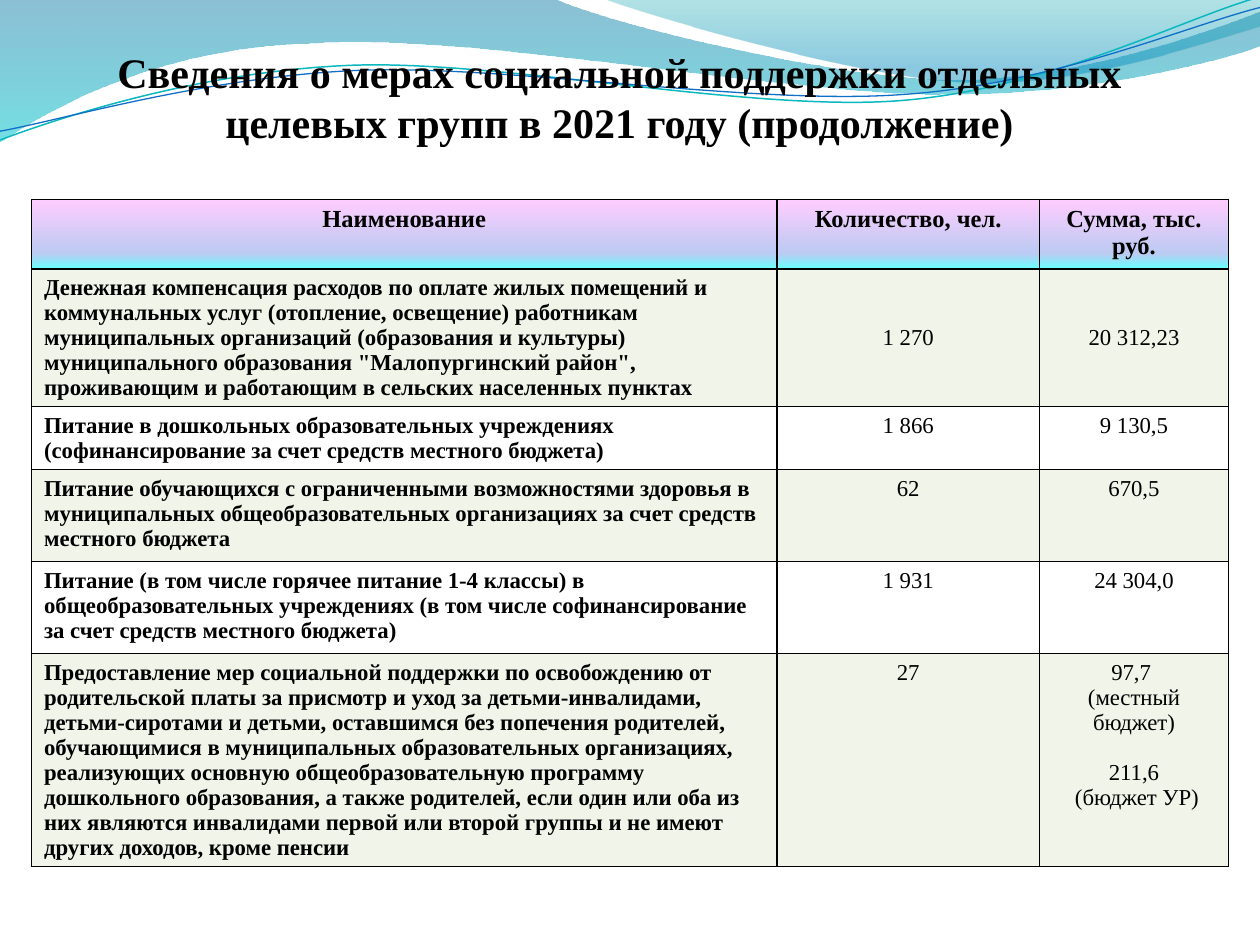
import pptx
import pptx.dml.color
import pptx.enum.text
import pptx.oxml
import pptx.oxml.ns
import pptx.util

Pt = pptx.util.Pt
RGB = pptx.dml.color.RGBColor
ALIGN = pptx.enum.text.PP_ALIGN
ANCHOR = pptx.enum.text.MSO_ANCHOR
qn = pptx.oxml.ns.qn
NS = pptx.oxml.ns.nsdecls("a")

BLACK = RGB(0x00, 0x00, 0x00)
WHITE = RGB(0xFF, 0xFF, 0xFF)
GREEN = RGB(0xF0, 0xF4, 0xE9)
TEAL = RGB(0x0A, 0xB8, 0xBF)
BLUE = RGB(0x0F, 0x6F, 0xC6)

# Gradient stops: position, colour, opacity in percent
DEEP = [(0, RGB(0x00, 0x74, 0xA1), 45), (100, RGB(0x00, 0xC6, 0xCF), 55)]
PALE = [(0, RGB(0x00, 0xA1, 0xA9), 30), (80, RGB(0x00, 0x8B, 0xBF), 45)]
HEAD = [(0, RGB(0xFF, 0xCC, 0xFF), 100), (78, RGB(0xBB, 0xCB, 0xF2), 100),
        (100, RGB(0x66, 0xFF, 0xFF), 100)]

# Outlines: a pair is a straight step, six numbers are a Bezier curve
LEFT = [(0, 0), (316.8, -0.7), (342.7, 12.2, 478, 45.4, 545.8, 45.4),
        (614, 45.4, 689.8, 18.7, 720, 6.5), (720.7, 26),
        (707.8, 31.7, 626.4, 54.7, 537, 54),
        (447.8, 54, 275, 20.2, 185, 24.5),
        (92.9, 26, 33, 59.8, -0.7, 81.4), (0, 0)]
RIGHT = [(345, -0.7), (366.5, 7.9, 491, 44.6, 553.7, 46.8),
         (616.3, 49.7, 692, 23, 720, 15), (720, 0), (345, -0.7)]
UPPER = [(0, 80), (34.6, 67, 113.8, 41, 199.4, 37.4),
         (284.4, 33.8, 427, 64, 513.4, 57.6),
         (599.8, 51, 675.4, 10.8, 718.6, -1.4)]
LOWER = [(0, 75), (33.8, 69, 118, 44, 203.8, 40.3),
         (290.2, 36.7, 429.8, 60.5, 516.2, 54),
         (602, 48.2, 677.5, 15, 720, 4.3)]

TITLE = ("Сведения о мерах социальной поддержки отдельных "
         "целевых групп в 2021 году (продолжение)")
COLS = [426, 150, 108]
ROWS = [39.6, 78.5, 36, 52.6, 52.6, 121.7]
DATA = [
    ("Наименование", "Количество, чел.", "Сумма, тыс. руб."),
    ("Денежная компенсация расходов по оплате жилых помещений и коммунальных "
     "услуг (отопление, освещение) работникам муниципальных организаций "
     "(образования и культуры) муниципального образования "
     "\"Малопургинский район\", проживающим и работающим в сельских "
     "населенных пунктах", "1 270", "20 312,23"),
    ("Питание в дошкольных образовательных учреждениях (софинансирование "
     "за счет средств местного бюджета)", "1 866", "9 130,5"),
    ("Питание обучающихся с ограниченными возможностями здоровья в "
     "муниципальных общеобразовательных организациях за счет средств "
     "местного бюджета", "62", "670,5"),
    ("Питание (в том числе горячее питание 1-4 классы) в "
     "общеобразовательных учреждениях (в том числе софинансирование "
     "за счет средств местного бюджета)", "1 931", "24 304,0"),
    ("Предоставление мер социальной поддержки по освобождению от "
     "родительской платы за присмотр и уход за детьми-инвалидами, "
     "детьми-сиротами и детьми, оставшимся без попечения родителей, "
     "обучающимися в муниципальных образовательных организациях, "
     "реализующих основную общеобразовательную программу дошкольного "
     "образования, а также родителей, если один или оба из них являются "
     "инвалидами первой или второй группы и не имеют других доходов, "
     "кроме пенсии", "27",
     "97,7 \n(местный бюджет)\n211,6\n (бюджет УР)"),
]


class Deck:
    def __init__(self, font):
        self.font = font
        self.show = pptx.Presentation()
        self.show.slide_width, self.show.slide_height = Pt(720), Pt(540)
        self.slide = self.show.slides.add_slide(self.show.slide_layouts[5])

    def style(self, frame, size, bold, align):
        for para in frame.paragraphs:
            para.alignment = align
            for run in para.runs:
                font = run.font
                font.name, font.size, font.bold = self.font, Pt(size), bold
                font.color.rgb = BLACK

    def blend(self, fill, props, stops):
        """Fill from top to bottom with a gradient."""
        marks = "".join(
            f'<a:gs pos="{pos * 1000}"><a:srgbClr val="{tone}">'
            f'<a:alpha val="{part * 1000}"/></a:srgbClr></a:gs>'
            for pos, tone, part in stops)
        fill.background()
        props.replace(props.find(qn("a:noFill")), pptx.oxml.parse_xml(
            f'<a:gradFill {NS} rotWithShape="1"><a:gsLst>{marks}</a:gsLst>'
            '<a:lin ang="5400000" scaled="0"/></a:gradFill>'))

    def free(self, steps, close):
        ends = [(Pt(s[-2]), Pt(s[-1])) for s in steps]
        pen = self.slide.shapes.build_freeform(*ends[0])
        pen.add_line_segments(ends[1:], close=close)
        shape = pen.convert_to_shape()
        shape.shadow.inherit = False
        # Bend the straight segments that stand for curves
        lines = list(shape.element.iter(qn("a:lnTo")))
        for line, step in zip(lines, steps[1:]):
            if len(step) == 6:
                dots = "".join(
                    f'<a:pt x="{Pt(x) - shape.left}" y="{Pt(y) - shape.top}"/>'
                    for x, y in zip(step[::2], step[1::2]))
                line.getparent().replace(line, pptx.oxml.parse_xml(
                    f'<a:cubicBezTo {NS}>{dots}</a:cubicBezTo>'))
        return shape

    def wave(self, steps, stops):
        shape = self.free(steps, True)
        shape.line.fill.background()
        self.blend(shape.fill, shape.element.spPr, stops)

    def curve(self, steps, tone, width):
        shape = self.free(steps, False)
        shape.fill.background()
        shape.line.color.rgb, shape.line.width = tone, Pt(width)

    def title(self, text, left, top, width, height):
        shape = self.slide.shapes.title
        shape.left, shape.top = Pt(left), Pt(top)
        shape.width, shape.height = Pt(width), Pt(height)
        frame = shape.text_frame
        frame.text = text
        frame.word_wrap = True
        frame.auto_size = pptx.enum.text.MSO_AUTO_SIZE.NONE
        frame.vertical_anchor = ANCHOR.BOTTOM
        frame.margin_left = frame.margin_right = frame.margin_bottom = 0
        self.style(frame, 24, True, ALIGN.CENTER)
        # Bring the title in front of the waves
        shape.element.getparent().append(shape.element)

    def edge(self, props):
        for side in "LRTB":
            props.append(pptx.oxml.parse_xml(
                f'<a:ln{side} {NS} w="12700"><a:solidFill>'
                f'<a:srgbClr val="{BLACK}"/></a:solidFill></a:ln{side}>'))

    def table(self, data, left, top, cols, rows):
        grid = self.slide.shapes.add_table(
            len(rows), len(cols), Pt(left), Pt(top),
            Pt(sum(cols)), Pt(sum(rows))).table
        for col, width in zip(grid.columns, cols):
            col.width = Pt(width)
        for row, height in zip(grid.rows, rows):
            row.height = Pt(height)
        for r, line in enumerate(data):
            for c, text in enumerate(line):
                cell = grid.cell(r, c)
                cell.text_frame.text = text
                name = c == 0 and r > 0
                self.style(cell.text_frame, 13 if r else 14,
                           r == 0 or c == 0,
                           ALIGN.LEFT if name else ALIGN.CENTER)
                props = cell._tc.get_or_add_tcPr()
                self.edge(props)
                if r == 0:
                    self.blend(cell.fill, props, HEAD)
                else:
                    cell.fill.solid()
                    cell.fill.fore_color.rgb = GREEN if r % 2 else WHITE
        return grid


def main():
    deck = Deck("Times New Roman")

    # Waves along the top
    deck.wave(LEFT, DEEP)
    deck.wave(RIGHT, PALE)
    deck.curve(UPPER, TEAL, 0.85)
    deck.curve(LOWER, BLUE, 0.75)

    # Title
    deck.title(TITLE, 30, 12, 648, 72)

    # Support table
    grid = deck.table(DATA, 18, 114.1, COLS, ROWS)
    for c in (1, 2):
        grid.cell(1, c).vertical_anchor = ANCHOR.MIDDLE
    # Set the two budgets apart
    grid.cell(5, 2).text_frame.paragraphs[2].space_before = Pt(14.4)

    deck.show.save("out.pptx")


if __name__ == "__main__":
    main()
